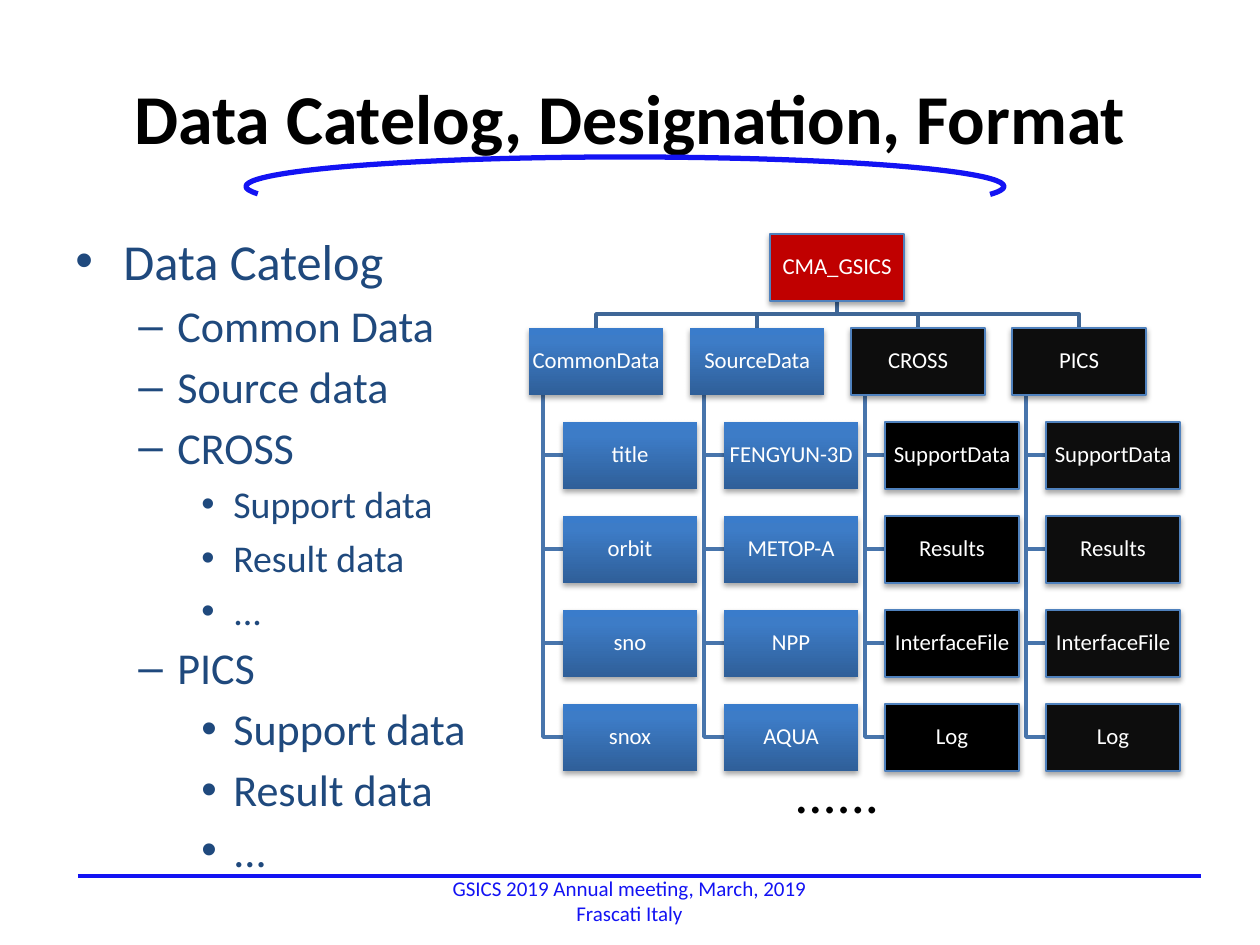
from lxml import etree
from pptx import Presentation
from pptx.dml.color import RGBColor
from pptx.enum.shapes import MSO_CONNECTOR, MSO_SHAPE
from pptx.enum.text import MSO_ANCHOR, PP_ALIGN
from pptx.oxml.ns import qn
from pptx.util import Emu, Pt

SCALE = 914400 / 126
FONT = "Calibri"
RECTANGLE, ARC = MSO_SHAPE.RECTANGLE, MSO_SHAPE.ARC
STRAIGHT = MSO_CONNECTOR.STRAIGHT
LEFT, CENTER = PP_ALIGN.LEFT, PP_ALIGN.CENTER
TOP, MIDDLE = MSO_ANCHOR.TOP, MSO_ANCHOR.MIDDLE

BLACK = RGBColor(0x00, 0x00, 0x00)
NEAR_BLACK = RGBColor(0x0D, 0x0D, 0x0D)
WHITE = RGBColor(0xFF, 0xFF, 0xFF)
RED = RGBColor(0xC0, 0x00, 0x00)
NAVY = RGBColor(0x1F, 0x49, 0x7D)
BRIGHT_BLUE = RGBColor(0x13, 0x13, 0xF3)
BORDER_BLUE = RGBColor(0x4F, 0x81, 0xBD)
ROOT_LINE = RGBColor(0x3F, 0x67, 0x97)
BRANCH_LINE = RGBColor(0x48, 0x75, 0xAC)
GRADIENT = (
    (0, RGBColor(0x2F, 0x5F, 0x99)),
    (80, RGBColor(0x3D, 0x7C, 0xC7)),
    (100, RGBColor(0x3A, 0x7C, 0xCB)),
)

BOX_WIDTH, BOX_HEIGHT = 134, 67
TREE_LEFT, TREE_TOP = 529, 234
COLUMN_PITCH, ROW_PITCH = 161, 94
CHILD_INDENT, SPINE_INDENT = 34, 14

BULLET_LEVELS = (("•", 48, 48), ("–", 102, 39), ("•", 158, 32))
CATALOG = (
    (0, "Data Catelog", 28.8),
    (1, "Common Data", 25.2),
    (1, "Source data", 25.2),
    (1, "CROSS", 25.2),
    (2, "Support data", 21.6),
    (2, "Result data", 21.6),
    (2, "...", 21.6),
    (1, "PICS", 25.2),
    (2, "Support data", 25.2),
    (2, "Result data", 25.2),
    (2, "...", 25.2),
)
PRODUCT_FILES = ("SupportData", "Results", "InterfaceFile", "Log")
BRANCHES = (
    ("CommonData", ("title", "orbit", "sno", "snox"), None, None),
    ("SourceData", ("FENGYUN-3D", "METOP-A", "NPP", "AQUA"), None, None),
    ("CROSS", PRODUCT_FILES, NEAR_BLACK, BLACK),
    ("PICS", PRODUCT_FILES, NEAR_BLACK, NEAR_BLACK),
)


def px(length):
    return Emu(round(length * SCALE))


def place(shape, left, top, width, height):
    shape.left, shape.top = px(left), px(top)
    shape.width, shape.height = px(width), px(height)


def write_text(frame, text, *, size, color, bold=False, align=LEFT,
               anchor=TOP, margin=None, line_spacing=None):
    frame.word_wrap = True
    frame.vertical_anchor = anchor
    if margin is not None:
        frame.margin_left = frame.margin_right = px(margin)
        frame.margin_top = frame.margin_bottom = px(margin)
    paragraph = frame.paragraphs[0]
    paragraph.text = text
    format_paragraph(paragraph, size, color, bold)
    paragraph.alignment = align
    paragraph.line_spacing = line_spacing


def format_paragraph(paragraph, size, color, bold=False):
    font = paragraph.runs[0].font
    font.name, font.size, font.bold = FONT, Pt(size), bold
    font.color.rgb = color


def add_text(slide, text, left, top, width, height, **text_format):
    box = slide.shapes.add_textbox(px(left), px(top), px(width), px(height))
    write_text(box.text_frame, text, **text_format)


def add_bullet(paragraph, level):
    character, margin, hanging = BULLET_LEVELS[level]
    properties = paragraph._p.get_or_add_pPr()
    properties.set("marL", str(px(margin)))
    properties.set("indent", str(px(-hanging)))
    etree.SubElement(properties, qn("a:buFont"), typeface="Arial")
    etree.SubElement(properties, qn("a:buChar"), char=character)


def add_catalog(slide):
    box = slide.shapes.add_textbox(px(63), px(224), px(1134), px(624))
    frame = box.text_frame
    frame.word_wrap = True
    for index, (level, text, size) in enumerate(CATALOG):
        paragraph = frame.add_paragraph() if index else frame.paragraphs[0]
        paragraph.text = text
        paragraph.level = level
        add_bullet(paragraph, level)
        if index:
            paragraph.space_before = Pt(4.5)
        format_paragraph(paragraph, size, NAVY)


def set_gradient(shape):
    shape.fill.gradient()
    shape.fill.gradient_angle = 90
    stops = shape.element.spPr.find(qn("a:gradFill")).find(qn("a:gsLst"))
    stops.clear()
    for position, color in GRADIENT:
        stop = etree.SubElement(stops, qn("a:gs"), pos=str(position * 1000))
        etree.SubElement(stop, qn("a:srgbClr"), val=str(color))


def add_shadow(shape):
    shape.shadow.inherit = False
    effects = shape.element.spPr.find(qn("a:effectLst"))
    shadow = etree.SubElement(effects, qn("a:outerShdw"), blurRad="40000",
                              dist="23000", dir="5400000", rotWithShape="0")
    color = etree.SubElement(shadow, qn("a:srgbClr"), val=str(BLACK))
    etree.SubElement(color, qn("a:alpha"), val="35000")


def add_node(slide, text, left, top, fill=None):
    node = slide.shapes.add_shape(RECTANGLE, px(left), px(top),
                                  px(BOX_WIDTH), px(BOX_HEIGHT))
    if fill is None:
        set_gradient(node)
        node.line.fill.background()
    else:
        node.fill.solid()
        node.fill.fore_color.rgb = fill
        node.line.color.rgb = BORDER_BLUE
        node.line.width = Pt(0.75)
    add_shadow(node)
    write_text(node.text_frame, text, size=13, color=WHITE, align=CENTER,
               anchor=MIDDLE, margin=1, line_spacing=0.9)


def add_elbow(slide, points, color):
    builder = slide.shapes.build_freeform(*points[0], scale=SCALE)
    builder.add_line_segments(points[1:], close=False)
    elbow = builder.convert_to_shape()
    elbow.fill.background()
    elbow.line.color.rgb = color
    elbow.line.width = Pt(2)
    elbow.shadow.inherit = False


def add_tree(slide):
    root_left = TREE_LEFT + COLUMN_PITCH * (len(BRANCHES) - 1) // 2
    root_center = root_left + BOX_WIDTH // 2
    root_bottom = TREE_TOP + BOX_HEIGHT
    head_top = TREE_TOP + ROW_PITCH
    bus = (root_bottom + head_top) // 2
    nodes = [("CMA_GSICS", root_left, TREE_TOP, RED)]
    for column, (head, children, head_fill, child_fill) in enumerate(BRANCHES):
        left = TREE_LEFT + column * COLUMN_PITCH
        center = left + BOX_WIDTH // 2
        spine = left + SPINE_INDENT
        child_left = left + CHILD_INDENT
        add_elbow(slide, [(root_center, root_bottom), (root_center, bus),
                          (center, bus), (center, head_top)], ROOT_LINE)
        nodes.append((head, left, head_top, head_fill))
        for row, child in enumerate(children, start=1):
            top = head_top + row * ROW_PITCH
            middle = top + BOX_HEIGHT // 2
            add_elbow(slide, [(spine, head_top + BOX_HEIGHT), (spine, middle),
                              (child_left, middle)], BRANCH_LINE)
            nodes.append((child, child_left, top, child_fill))
    for node in nodes:
        add_node(slide, *node)


def add_title(slide):
    title = slide.shapes.title
    place(title, 63, 38, 1134, 158)
    write_text(title.text_frame, "Data Catelog, Designation, Format",
               size=40, color=BLACK, bold=True, align=CENTER, anchor=MIDDLE)


def add_decoration(slide):
    arc = slide.shapes.add_shape(ARC, px(246), px(157), px(758), px(59))
    arc.adjustments[0], arc.adjustments[1] = 107.316, 0.743
    arc.fill.background()
    arc.line.color.rgb = BRIGHT_BLUE
    arc.line.width = Pt(3)
    arc.shadow.inherit = False
    rule = slide.shapes.add_connector(STRAIGHT, px(78), px(876),
                                      px(1201), px(876))
    rule.line.color.rgb = BRIGHT_BLUE
    rule.line.width = Pt(2.25)
    etree.SubElement(rule.element.spPr, qn("a:effectLst"))


def main():
    presentation = Presentation()
    presentation.slide_width, presentation.slide_height = px(1260), px(945)
    slide = presentation.slides.add_slide(presentation.slide_layouts[5])
    add_title(slide)
    add_decoration(slide)
    add_text(slide, "GSICS 2019 Annual meeting, March, 2019 Frascati Italy",
             431, 876, 397, 50, size=12, color=BRIGHT_BLUE, align=CENTER,
             anchor=MIDDLE)
    add_catalog(slide)
    add_tree(slide)
    add_text(slide, "......", 782, 751, 151, 81, size=32, color=BLACK)
    presentation.save("out.pptx")


if __name__ == "__main__":
    main()
